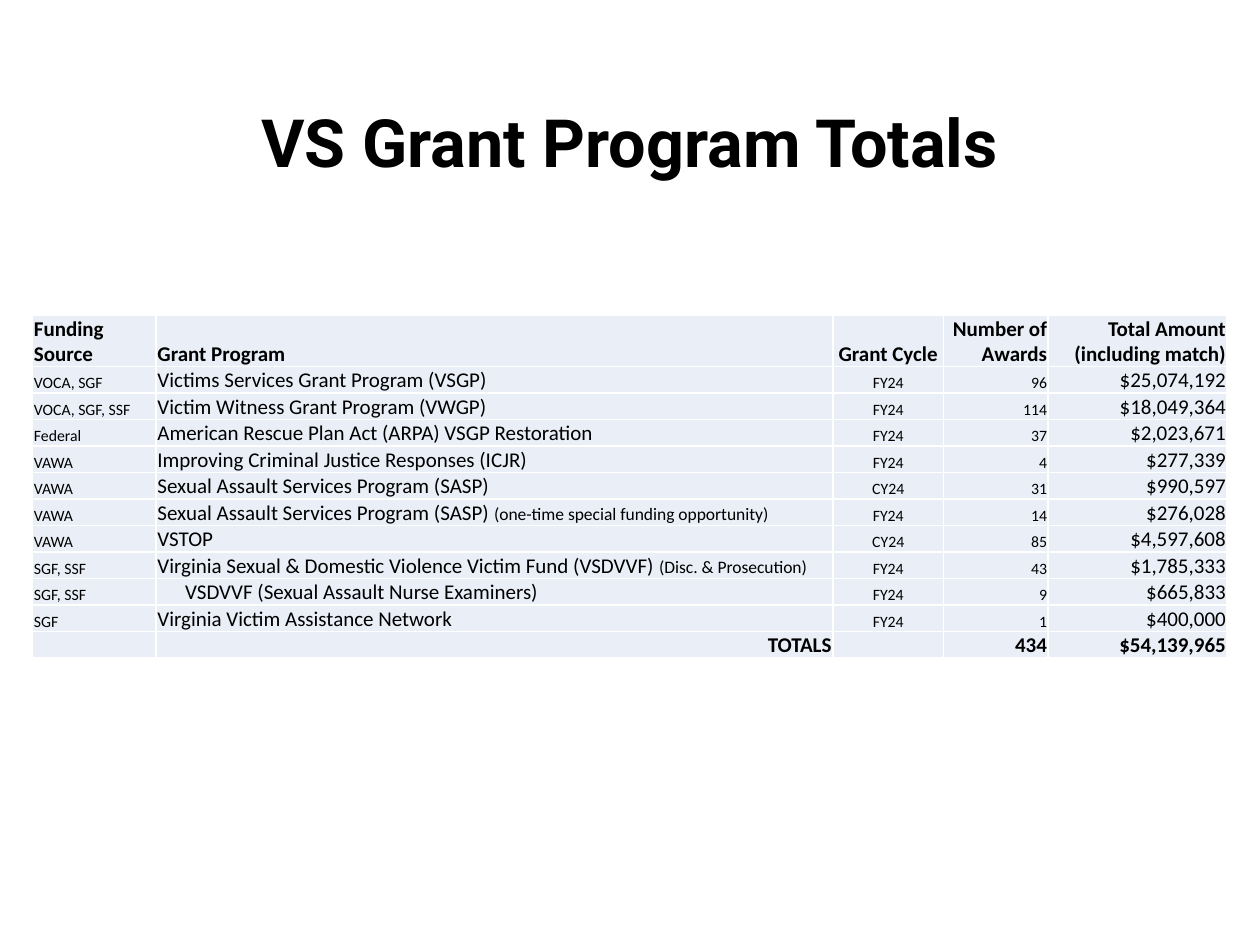
from lxml.etree import SubElement
from pptx import Presentation
from pptx.dml.color import RGBColor
from pptx.enum.text import MSO_ANCHOR as Anchor, PP_ALIGN as Align
from pptx.oxml.ns import qn
from pptx.util import Inches, Pt

COLUMN_WIDTHS = [0.98, 5.37, 0.88, 0.83, 1.42]
ALIGNMENTS = [Align.LEFT, Align.LEFT, Align.CENTER, Align.RIGHT, Align.RIGHT]
BODY_SIZES = [9, 12, 9, 9, 12]
HEADER_HEIGHT = 0.4
ROW_HEIGHT = 0.21
CELL_MARGIN = 0.01
SUBPROGRAM_INDENT = 0.23

HEADERS = ["Funding Source", "Grant Program", "Grant Cycle", "Number of Awards",
           "Total Amount (including match)"]
GRANTS = [
    ("VOCA, SGF", "Victims Services Grant Program (VSGP)", "FY24", "96", "$25,074,192"),
    ("VOCA, SGF, SSF", "Victim Witness Grant Program (VWGP)", "FY24", "114", "$18,049,364"),
    ("Federal", "American Rescue Plan Act (ARPA) VSGP Restoration", "FY24", "37", "$2,023,671"),
    ("VAWA", "Improving Criminal Justice Responses (ICJR)", "FY24", "4", "$277,339"),
    ("VAWA", "Sexual Assault Services Program (SASP)", "CY24", "31", "$990,597"),
    ("VAWA", "Sexual Assault Services Program (SASP) ", "FY24", "14", "$276,028"),
    ("VAWA", "VSTOP", "CY24", "85", "$4,597,608"),
    ("SGF, SSF", "Virginia Sexual & Domestic Violence Victim Fund (VSDVVF) ", "FY24", "43",
     "$1,785,333"),
    ("SGF, SSF", "VSDVVF (Sexual Assault Nurse Examiners)", "FY24", "9", "$665,833"),
    ("SGF", "Virginia Victim Assistance Network", "FY24", "1", "$400,000"),
]
PROGRAM_NOTES = {6: "(one-time special funding opportunity)", 8: "(Disc. & Prosecution)"}
SUBPROGRAM_ROW = 9
TOTALS = ["", "TOTALS", "", "434", "$54,139,965"]


def color(value):
    """Return the colour for a hex string."""
    return RGBColor.from_string(value)


def add_run(paragraph, text, size, font="Calibri", bold=False):
    """Add one black run to a paragraph."""
    run = paragraph.add_run()
    run.text = text
    run.font.name = font
    run.font.size = Pt(size)
    run.font.bold = bold
    run.font.color.rgb = color("000000")


def set_borders(cell, value):
    """Draw a one-point border on every side of a cell."""
    properties = cell._tc.get_or_add_tcPr()
    for side in ("a:lnL", "a:lnR", "a:lnT", "a:lnB"):
        line = SubElement(properties, qn(side), w=str(Pt(1)))
        fill = SubElement(line, qn("a:solidFill"))
        SubElement(fill, qn("a:srgbClr"), val=value)


def fill_cell(cell, text, size, alignment, bold):
    """Style a table cell and write its text."""
    set_borders(cell, "FFFFFF")
    cell.fill.solid()
    cell.fill.fore_color.rgb = color("EAEFF7")
    cell.margin_left = cell.margin_right = cell.margin_top = Inches(CELL_MARGIN)
    cell.margin_bottom = 0
    cell.vertical_anchor = Anchor.BOTTOM
    paragraph = cell.text_frame.paragraphs[0]
    paragraph.alignment = alignment
    if text:
        add_run(paragraph, text, size, bold=bold)
    else:
        SubElement(paragraph._p, qn("a:endParaRPr"), sz=str(size * 100))


def add_title(slide, left, top, width, height):
    """Place the slide title in the given box."""
    shape = slide.shapes.add_textbox(Inches(left), Inches(top), Inches(width), Inches(height))
    frame = shape.text_frame
    frame.word_wrap = True
    frame.vertical_anchor = Anchor.MIDDLE
    frame.margin_left = frame.margin_right = frame.margin_top = frame.margin_bottom = 0
    paragraph = frame.paragraphs[0]
    paragraph.alignment = Align.CENTER
    paragraph.line_spacing = 0.9
    add_run(paragraph, "VS Grant Program Totals", 38, "Roboto", True)


def add_grant_table(slide, left, top, width, height):
    """Place the table of grants and totals in the given box."""
    rows = [HEADERS, *GRANTS, TOTALS]
    table = slide.shapes.add_table(len(rows), len(COLUMN_WIDTHS), Inches(left), Inches(top),
                                   Inches(width), Inches(height)).table
    for column, column_width in zip(table.columns, COLUMN_WIDTHS):
        column.width = Inches(column_width)
    for index, values in enumerate(rows):
        table.rows[index].height = Inches(ROW_HEIGHT if index else HEADER_HEIGHT)
        is_bold = values in (HEADERS, TOTALS)
        sizes = [12] * len(values) if is_bold else BODY_SIZES
        alignments = list(ALIGNMENTS)
        if values is TOTALS:
            alignments[1] = Align.RIGHT
        for column, text in enumerate(values):
            fill_cell(table.cell(index, column), text, sizes[column], alignments[column], is_bold)
    for index, note in PROGRAM_NOTES.items():
        add_run(table.cell(index, 1).text_frame.paragraphs[0], note, 10)
    table.cell(SUBPROGRAM_ROW, 1).margin_left = Inches(SUBPROGRAM_INDENT)


def main():
    """Build and save the presentation."""
    presentation = Presentation()
    presentation.slide_width = Inches(10)
    presentation.slide_height = Inches(7.5)
    slide = presentation.slides.add_slide(presentation.slide_layouts[6])
    add_title(slide, 0.5, 0.59, 9, 1.14)
    add_grant_table(slide, 0.26, 2.5, sum(COLUMN_WIDTHS), HEADER_HEIGHT + 11 * ROW_HEIGHT)
    presentation.save("out.pptx")


if __name__ == "__main__":
    main()
